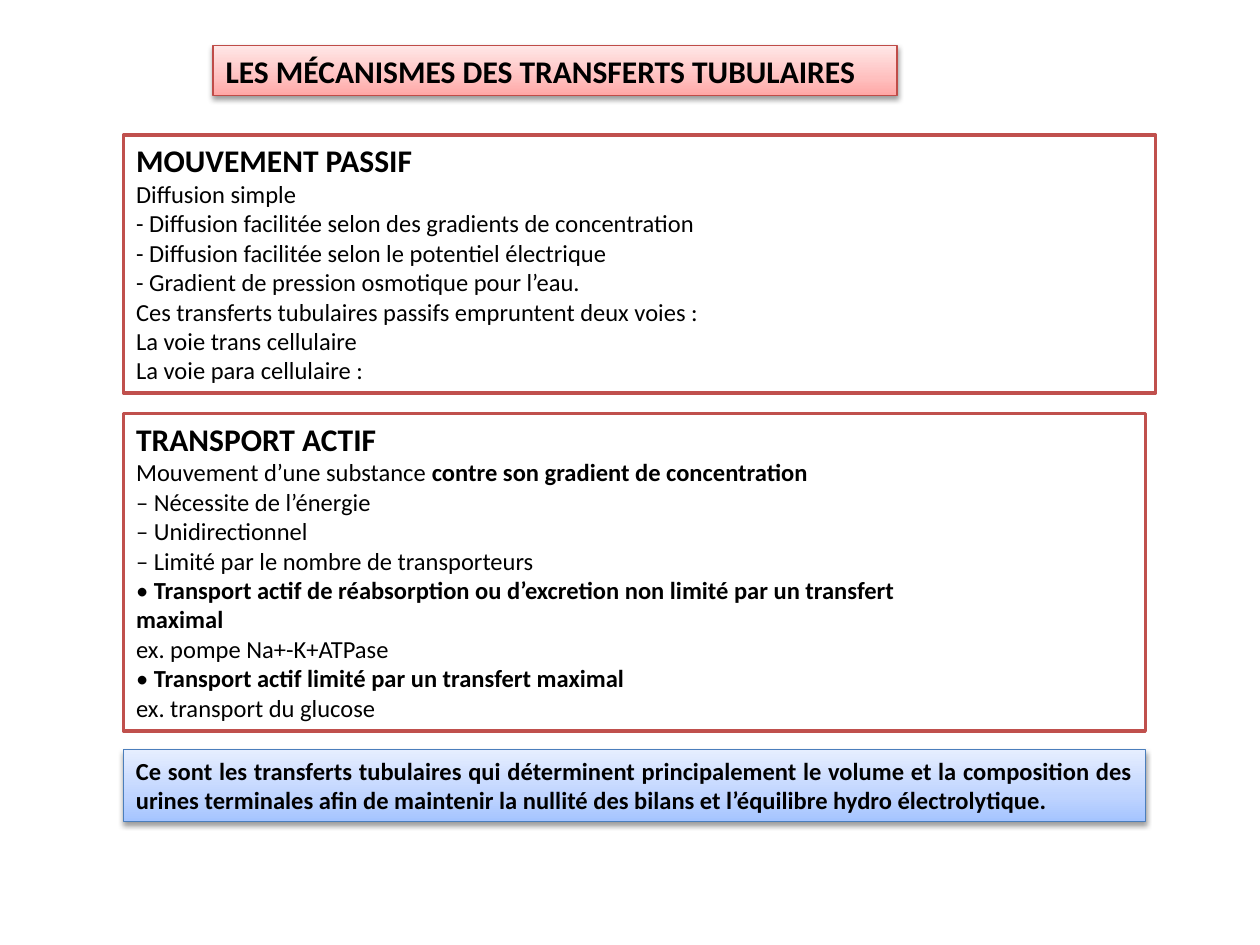
"""Build a slide on the mechanisms of tubular transfers."""
from dataclasses import dataclass

from lxml import etree
from pptx import Presentation
from pptx.dml.color import RGBColor
from pptx.enum import shapes, text
from pptx.oxml.ns import qn
from pptx.util import Inches, Pt


@dataclass(frozen=True)
class Theme:
    font: str = "Calibri"
    ink: str = "000000"
    paper: str = "FFFFFF"
    frame: str = "C0504D"
    red_line: str = "BF4C48"
    blue_line: str = "4B7EBC"
    red: tuple = ("FFA6A5", "FFC0BF", "FFE7E7")
    blue: tuple = ("A4C4FF", "BFD4FF", "E6EEFF")
    heading: int = 18
    body: int = 14


def add_color(parent, value):
    return etree.SubElement(parent, qn("a:srgbClr"), val=value)


def write(tf, lines, first_size, align):
    for i, line in enumerate(lines):
        p = tf.add_paragraph() if i else tf.paragraphs[0]
        for name, value in {"alignment": align, "space_before": Pt(0)}.items():
            setattr(p, name, value)
        pPr = p._p.get_or_add_pPr()
        pPr.set("marL", "0")
        pPr.set("indent", "0")
        etree.SubElement(pPr, qn("a:buNone"))
        for j, part in enumerate(line.split("**")):
            if part:
                r = p.add_run()
                r.text = part
                font = {"name": theme.font, "bold": j % 2 == 1,
                        "size": Pt(theme.body if i else first_size)}
                for name, value in font.items():
                    setattr(r.font, name, value)
                r.font.color.rgb = RGBColor.from_string(theme.ink)


theme = Theme()
prs = Presentation()
prs.slide_width, prs.slide_height = Inches(10), Inches(7.5)
s = prs.slides.add_slide(prs.slide_layouts[3])

passive = [
    "**MOUVEMENT PASSIF**",
    "Diffusion simple",
    "- Diffusion facilitée selon des gradients de concentration",
    "- Diffusion facilitée selon le potentiel électrique",
    "- Gradient de pression osmotique pour l’eau.",
    "Ces transferts tubulaires passifs empruntent deux voies :",
    "La voie trans cellulaire",
    "La voie para cellulaire :",
]
active = [
    "**TRANSPORT ACTIF**",
    "Mouvement d’une substance **contre son gradient de concentration**",
    "– Nécessite de l’énergie",
    "– Unidirectionnel",
    "– Limité par le nombre de transporteurs",
    "• **Transport actif de réabsorption ou d’excretion non limité par un transfert**",
    "**maximal**",
    "ex. pompe Na+-K+ATPase",
    "• **Transport actif limité par un transfert maximal**",
    "ex. transport du glucose",
]
conclusion = [
    "**Ce sont les transferts tubulaires qui déterminent principalement le volume "
    "et la composition des urines terminales afin de maintenir la nullité des "
    "bilans et l’équilibre hydro électrolytique.**"
]

left, justify = text.PP_ALIGN.LEFT, text.PP_ALIGN.JUSTIFY
title, top_list, low_list = s.placeholders
summary = s.shapes.add_shape(shapes.MSO_SHAPE.RECTANGLE, 0, 0, Inches(1), Inches(1))
boxes = [
    (title, (1.69, 0.36, 5.43, 0.4), theme.red, theme.red_line, 0.75,
     ["**LES MÉCANISMES DES TRANSFERTS TUBULAIRES**"], theme.heading, left),
    (top_list, (0.98, 1.07, 8.19, 2.05), None, theme.frame, 2,
     passive, theme.heading, left),
    (low_list, (0.98, 3.28, 8.11, 2.52), None, theme.frame, 2,
     active, theme.heading, left),
    (summary, (0.98, 5.95, 8.11, 0.57), theme.blue, theme.blue_line, 0.75,
     conclusion, theme.body, justify),
]

for sp, place, gradient, line, width, lines, size, align in boxes:
    for name, value in zip(("left", "top", "width", "height"), place):
        setattr(sp, name, Inches(value))
    sp.line.color.rgb = RGBColor.from_string(line)
    sp.line.width = Pt(width)
    sp.shadow.inherit = False
    if gradient:
        sp.fill.gradient()
        sp.fill.gradient_angle = 90
        spPr = sp._element.spPr
        stops = spPr.find(qn("a:gradFill")).find(qn("a:gsLst"))
        stops.clear()
        for pos, value in zip((0, 35, 100), gradient):
            add_color(etree.SubElement(stops, qn("a:gs"), pos=str(pos * 1000)), value)
        shadow = etree.SubElement(
            spPr.find(qn("a:effectLst")), qn("a:outerShdw"), blurRad=str(Pt(3.1)),
            dist=str(Pt(1.6)), dir="5400000", rotWithShape="0")
        etree.SubElement(add_color(shadow, theme.ink), qn("a:alpha"), val="38000")
    else:
        sp.fill.solid()
        sp.fill.fore_color.rgb = RGBColor.from_string(theme.paper)
    tf = sp.text_frame
    frame = {"word_wrap": True, "vertical_anchor": text.MSO_ANCHOR.TOP,
             "auto_size": text.MSO_AUTO_SIZE.NONE}
    for name, value in frame.items():
        setattr(tf, name, value)
    write(tf, lines, size, align)

prs.save("out.pptx")
